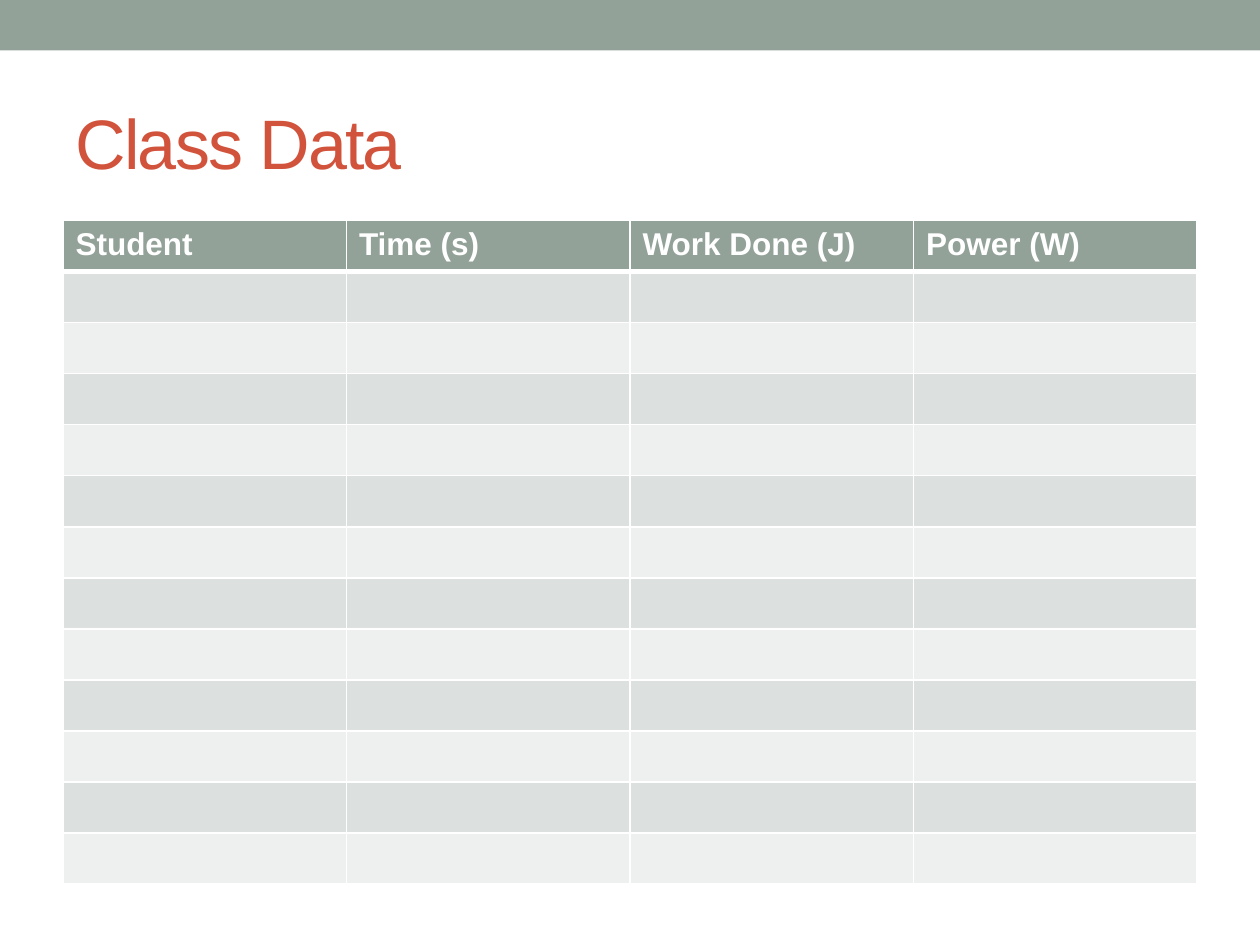
from lxml.etree import SubElement
from pptx import Presentation
from pptx.dml.color import RGBColor
from pptx.enum.shapes import MSO_SHAPE as Shape
from pptx.enum.text import MSO_ANCHOR as Anchor
from pptx.oxml.ns import qn
from pptx.util import Inches, Pt

SAGE, RUST, WHITE = "93A299", "D2533C", "FFFFFF"
BANDS = ["EEF0EF", "DCE0DE"]
HEADINGS = ["Student", "Time (s)", "Work Done (J)", "Power (W)"]
ROWS = 13
MARGIN, CONTENT_WIDTH = Inches(0.5), Inches(9)


def paint(color_format, color):
    color_format.rgb = RGBColor.from_string(color)


def add_border(cell, side, points):
    """Draw one white edge; call before the cell is filled, as the schema orders."""
    line = SubElement(cell._tc.get_or_add_tcPr(), qn(f"a:ln{side}"), w=str(Pt(points)))
    fill = SubElement(line, qn("a:solidFill"))
    SubElement(fill, qn("a:srgbClr"), val=WHITE)


presentation = Presentation()
presentation.slide_width, presentation.slide_height = Inches(10), Inches(7.5)
slide = presentation.slides.add_slide(presentation.slide_layouts[6])

# Top band
band = slide.shapes.add_shape(Shape.RECTANGLE, 0, 0, presentation.slide_width, Inches(0.4))
band.shadow.inherit = False
band.fill.solid()
paint(band.fill.fore_color, SAGE)
band.line.fill.background()

# Title
title = slide.shapes.add_textbox(MARGIN, Inches(0.58), CONTENT_WIDTH, Inches(1.08))
title.text_frame.word_wrap = True
title.text_frame.vertical_anchor = Anchor.MIDDLE
title.text_frame.text = "Class Data"
run = title.text_frame.paragraphs[0].runs[0]
run.font.name, run.font.size = "Arial", Pt(40)
paint(run.font.color, RUST)
run.font._element.set("spc", "-100")

# Empty results table below a header row
table = slide.shapes.add_table(
    ROWS, len(HEADINGS), MARGIN, Inches(1.75), CONTENT_WIDTH, Inches(5.27)
).table
for row_index, row in enumerate(table.rows):
    for column_index, cell in enumerate(row.cells):
        for side in "LRTB":
            under_header = (row_index, side) in [(0, "B"), (1, "T")]
            add_border(cell, side, 3 if under_header else 1)
        cell.fill.solid()
        paint(cell.fill.fore_color, BANDS[row_index % 2] if row_index else SAGE)
        if row_index == 0:
            cell.text_frame.text = HEADINGS[column_index]
            font = cell.text_frame.paragraphs[0].runs[0].font
            font.name, font.size, font.bold = "Arial", Pt(18), True
            paint(font.color, WHITE)

presentation.save("out.pptx")
